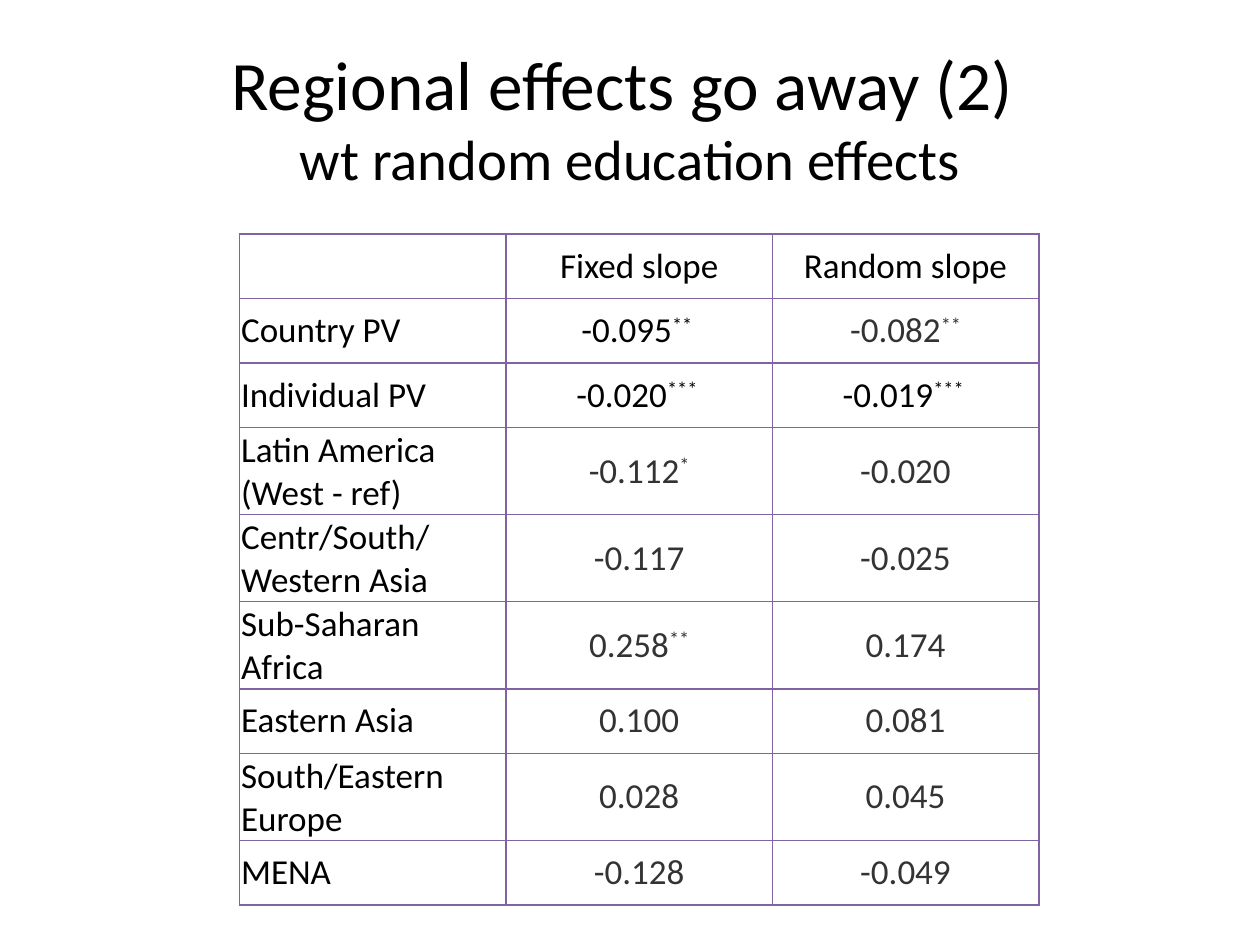
import pptx
import pptx.dml.color
import pptx.enum.text
import pptx.oxml
import pptx.oxml.ns
import pptx.util

Cm = pptx.util.Cm
Align = pptx.enum.text.PP_ALIGN
MIDDLE = pptx.enum.text.MSO_ANCHOR.MIDDLE

THEME = {
    "font": "Calibri",
    "black": "000000", "grey": "333333", "white": "FFFFFF", "border": "8064A2",
    "title": 39.6, "subtitle": 32.4, "table": 20,
}


def add_run(paragraph, text, size, color, superscript=False):
    run = paragraph.add_run()
    run.text = text
    font_format = {"name": THEME["font"], "size": pptx.util.Pt(THEME[size])}
    for name, value in font_format.items():
        setattr(run.font, name, value)
    run.font.color.rgb = pptx.dml.color.RGBColor.from_string(THEME[color])
    if superscript:
        run._r.get_or_add_rPr().set("baseline", "30000")


def add_borders(cell):
    properties = cell._tc.get_or_add_tcPr()
    for index, side in enumerate(("lnL", "lnR", "lnT", "lnB")):
        properties.insert(index, pptx.oxml.parse_xml(
            f'<a:{side} {pptx.oxml.ns.nsdecls("a")} w="12700"><a:solidFill>'
            f'<a:srgbClr val="{THEME["border"]}"/></a:solidFill></a:{side}>'))


presentation = pptx.Presentation()
presentation.slide_width = Cm(25.4)
presentation.slide_height = Cm(19.05)
slide = presentation.slides.add_slide(presentation.slide_layouts[6])

# Title in two sizes
title = slide.shapes.add_textbox(Cm(1.27), Cm(0.76), Cm(22.86), Cm(3.18))
for name, value in {"word_wrap": True, "vertical_anchor": MIDDLE}.items():
    setattr(title.text_frame, name, value)
paragraph = title.text_frame.paragraphs[0]
paragraph.alignment = Align.CENTER
add_run(paragraph, "Regional effects go away (2) ", "title", "black")
paragraph.add_line_break()
add_run(paragraph, "wt random education effects", "subtitle", "black")

# Each row: label, then (value, significance stars, color) per model
header = ("", "Fixed slope", "Random slope")
effects = [
    ("Country PV", ("-0.095", "** ", "black"), ("-0.082", "**", "grey")),
    ("Individual PV", ("-0.020", "*** ", "black"), ("-0.019", "*** ", "black")),
    ("Latin America (West - ref)", ("-0.112", "*", "grey"), ("-0.020", "", "grey")),
    ("Centr/South/Western Asia", ("-0.117", "", "grey"), ("-0.025", "", "grey")),
    ("Sub-Saharan Africa", ("0.258", "**", "grey"), ("0.174", "", "grey")),
    ("Eastern Asia", ("0.100", "", "grey"), ("0.081", "", "grey")),
    ("South/Eastern Europe", ("0.028", "", "grey"), ("0.045", "", "grey")),
    ("MENA", ("-0.128", "", "grey"), ("-0.049", "", "grey")),
]
rows = [[(text, "", "black") for text in header]]
rows += [[(label, "", "black"), *values] for label, *values in effects]

# Table of effects
row_height, column_width = Cm(1.3), Cm(5.37)
table = slide.shapes.add_table(
    len(rows), len(header), Cm(4.83), Cm(4.72),
    column_width * len(header), row_height * len(rows)).table
for column in table.columns:
    column.width = column_width
for row in table.rows:
    row.height = row_height

for row_index, row_values in enumerate(rows):
    for column_index, (text, stars, color) in enumerate(row_values):
        cell = table.cell(row_index, column_index)
        inset = Cm(0.03) if row_index == 0 or column_index == 0 else Cm(0)
        cell_format = {
            "vertical_anchor": MIDDLE, "margin_left": inset, "margin_right": inset,
            "margin_top": inset, "margin_bottom": inset,
        }
        for name, value in cell_format.items():
            setattr(cell, name, value)
        if row_index == 0:
            cell.fill.solid()
            cell.fill.fore_color.rgb = pptx.dml.color.RGBColor.from_string(THEME["white"])
        else:
            cell.fill.background()
        add_borders(cell)
        paragraph = cell.text_frame.paragraphs[0]
        paragraph.alignment = Align.LEFT if column_index == 0 else Align.CENTER
        if text:
            add_run(paragraph, text, "table", color)
        if stars:
            add_run(paragraph, stars, "table", color, superscript=True)

presentation.save("out.pptx")
